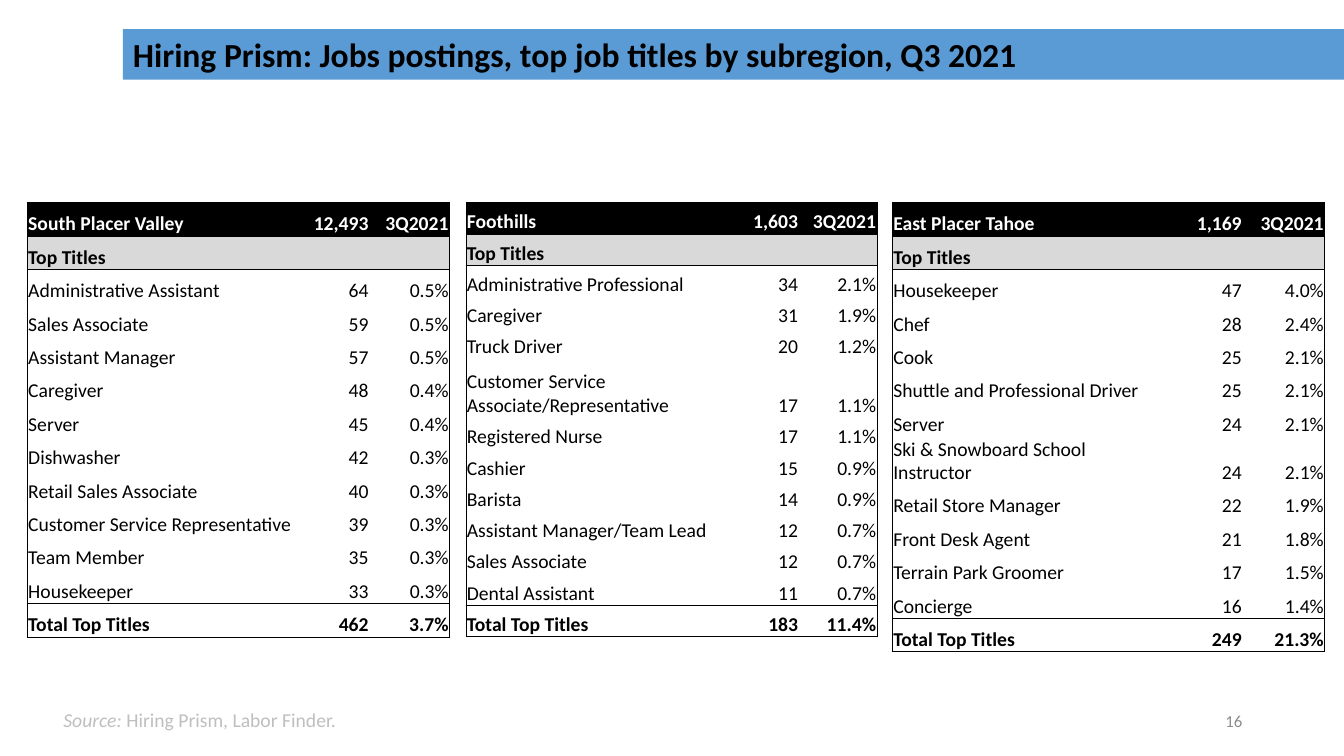
from lxml import etree
from pptx import Presentation
from pptx.dml.color import RGBColor
from pptx.enum.shapes import MSO_SHAPE
from pptx.enum.text import MSO_ANCHOR, PP_ALIGN
from pptx.oxml.ns import qn
from pptx.util import Inches, Pt

RECT = MSO_SHAPE.RECTANGLE
TOP, MIDDLE, BOTTOM = MSO_ANCHOR.TOP, MSO_ANCHOR.MIDDLE, MSO_ANCHOR.BOTTOM
LEFT, RIGHT = PP_ALIGN.LEFT, PP_ALIGN.RIGHT

BLACK = RGBColor(0x00, 0x00, 0x00)
WHITE = RGBColor(0xFF, 0xFF, 0xFF)
BLUE = RGBColor(0x5B, 0x9B, 0xD5)
SILVER = RGBColor(0xD9, 0xD9, 0xD9)
PALE = RGBColor(0xBF, 0xBF, 0xBF)
GRAY = RGBColor(0x8C, 0x8C, 0x8C)

FONT = "Calibri"
TABLE_TOP = 2.01
TABLE_HEIGHT = 4.31
TALL_ROW = 0.58

VALLEY = [
    ("Administrative Assistant", 64, "0.5%"),
    ("Sales Associate", 59, "0.5%"),
    ("Assistant Manager", 57, "0.5%"),
    ("Caregiver", 48, "0.4%"),
    ("Server", 45, "0.4%"),
    ("Dishwasher", 42, "0.3%"),
    ("Retail Sales Associate", 40, "0.3%"),
    ("Customer Service Representative", 39, "0.3%"),
    ("Team Member", 35, "0.3%"),
    ("Housekeeper", 33, "0.3%"),
    ("Total Top Titles", 462, "3.7%"),
]
FOOTHILLS = [
    ("Administrative Professional", 34, "2.1%"),
    ("Caregiver", 31, "1.9%"),
    ("Truck Driver", 20, "1.2%"),
    ("Customer Service Associate/Representative", 17, "1.1%"),
    ("Registered Nurse", 17, "1.1%"),
    ("Cashier", 15, "0.9%"),
    ("Barista", 14, "0.9%"),
    ("Assistant Manager/Team Lead", 12, "0.7%"),
    ("Sales Associate", 12, "0.7%"),
    ("Dental Assistant", 11, "0.7%"),
    ("Total Top Titles", 183, "11.4%"),
]
TAHOE = [
    ("Housekeeper", 47, "4.0%"),
    ("Chef", 28, "2.4%"),
    ("Cook", 25, "2.1%"),
    ("Shuttle and Professional Driver", 25, "2.1%"),
    ("Server", 24, "2.1%"),
    ("Ski & Snowboard School Instructor", 24, "2.1%"),
    ("Retail Store Manager", 22, "1.9%"),
    ("Front Desk Agent", 21, "1.8%"),
    ("Terrain Park Groomer", 17, "1.5%"),
    ("Concierge", 16, "1.4%"),
    ("Total Top Titles", 249, "21.3%"),
]


def write(frame, text, size=14, color=BLACK, bold=False, italic=False, align=LEFT):
    """Append a formatted run to the first paragraph of a text frame."""
    line = frame.paragraphs[0]
    line.alignment = align
    run = line.add_run()
    run.text = text
    font = run.font
    font.name, font.size = FONT, Pt(size)
    font.bold, font.italic = bold, italic
    font.color.rgb = color


def add_box(slide, left, top, width, height, anchor=TOP):
    """Add a wrapping text box and return its text frame."""
    area = map(Inches, (left, top, width, height))
    frame = slide.shapes.add_textbox(*area).text_frame
    frame.word_wrap = True
    frame.vertical_anchor = anchor
    return frame


def add_title(slide, text):
    """Add the blue title band."""
    band = slide.shapes.add_shape(
        RECT, Inches(1.22), Inches(0.29), Inches(12.36), Inches(0.5))
    band.shadow.inherit = False
    band.fill.solid()
    band.fill.fore_color.rgb = BLUE
    band.line.fill.background()
    band.text_frame.word_wrap = True
    band.text_frame.vertical_anchor = TOP
    write(band.text_frame, text, size=24, bold=True)


def set_edges(cell, **edges):
    """Draw the cell edges that are true and clear the others."""
    props = cell._tc.get_or_add_tcPr()
    for side, drawn in edges.items():
        line = etree.SubElement(props, qn(f"a:ln{side}"), w=str(Pt(0.5)))
        if drawn:
            fill = etree.SubElement(line, qn("a:solidFill"))
            etree.SubElement(fill, qn("a:srgbClr"), val=str(BLACK))
        else:
            etree.SubElement(line, qn("a:noFill"))


def set_cell(cell, text, fill, **style):
    """Fill a cell and write its text at the bottom."""
    cell.margin_left = cell.margin_right = cell.margin_top = Inches(0.01)
    cell.margin_bottom = 0
    cell.vertical_anchor = BOTTOM
    if fill is None:
        cell.fill.background()
    else:
        cell.fill.solid()
        cell.fill.fore_color.rgb = fill
    write(cell.text_frame, text, **style)


def add_titles(slide, region, postings, jobs, left, widths, tall=None):
    """Add the table of top job titles for one region."""
    rows = [(region, postings, "3Q2021"), ("Top Titles", "", ""), *jobs]
    count = len(rows)
    last = count - 1
    frame = slide.shapes.add_table(
        count, 3, Inches(left), Inches(TABLE_TOP),
        Inches(sum(widths)), Inches(TABLE_HEIGHT))
    table = frame.table
    table.first_row = table.horz_banding = False
    for column, width in zip(table.columns, widths):
        column.width = Inches(width)
    height = TABLE_HEIGHT / count
    if tall is not None:
        height = (TABLE_HEIGHT - TALL_ROW) / last
    rules = {0, 1, 2, last, count}
    fills = {0: BLACK, 1: SILVER}
    for r, row in enumerate(rows):
        table.rows[r].height = Inches(TALL_ROW if r == tall else height)
        for c, value in enumerate(row):
            cell = table.cell(r, c)
            set_edges(cell, L=c == 0, R=c == 2, T=r in rules, B=r + 1 in rules)
            text = f"{value:,} " if isinstance(value, int) else value
            set_cell(cell, text, fills.get(r),
                     color=WHITE if r == 0 else BLACK,
                     bold=r in (0, 1, last), align=RIGHT if c else LEFT)


def main():
    """Build the slide and save it."""
    deck = Presentation()
    deck.slide_width, deck.slide_height = Inches(13.33), Inches(7.5)
    slide = deck.slides.add_slide(deck.slide_layouts[6])
    add_title(slide, "Hiring Prism: Jobs postings, top job titles by subregion, Q3 2021")
    source = add_box(slide, 0.53, 6.97, 11.48, 0.34)
    write(source, "Source: ", color=PALE, italic=True)
    write(source, "Hiring Prism, Labor Finder.", color=PALE)
    add_titles(slide, "South Placer Valley", 12493, VALLEY, 0.27, (2.69, 0.75, 0.75))
    add_titles(slide, "Foothills", 1603, FOOTHILLS, 4.62, (2.62, 0.73, 0.73), tall=5)
    add_titles(slide, "East Placer Tahoe", 1169, TAHOE, 8.85, (2.75, 0.77, 0.77))
    number = add_box(slide, 9.42, 6.95, 3, 0.4, anchor=MIDDLE)
    write(number, "16", size=12, color=GRAY, align=RIGHT)
    deck.save("out.pptx")


if __name__ == "__main__":
    main()
